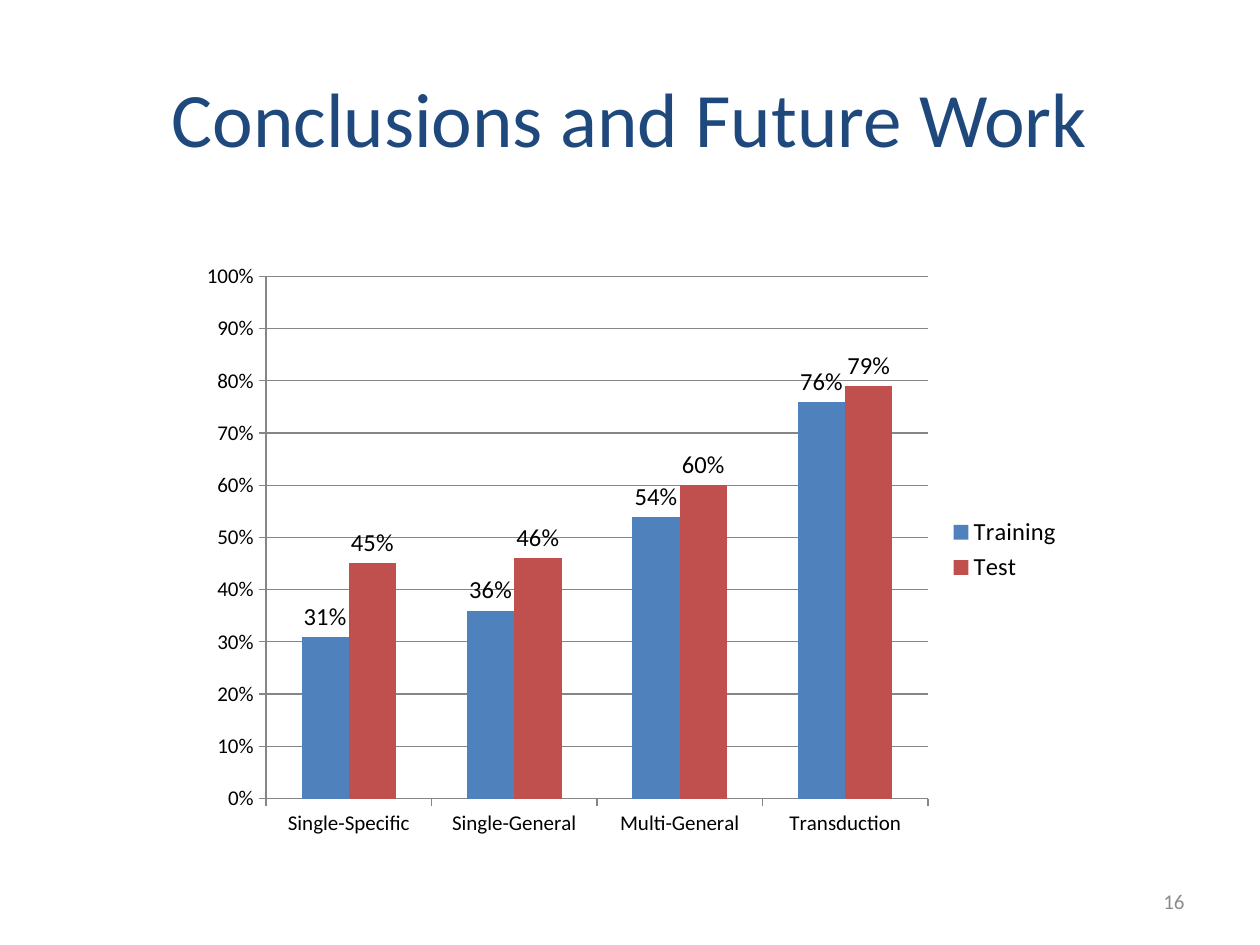
from pptx import Presentation
from pptx.chart.data import CategoryChartData
from pptx.dml.color import RGBColor
from pptx.enum.chart import (
    XL_CHART_TYPE as ChartType,
    XL_LABEL_POSITION as LabelPosition,
    XL_LEGEND_POSITION as LegendPosition,
    XL_TICK_MARK as TickMark,
)
from pptx.enum.text import MSO_ANCHOR as Anchor, PP_ALIGN as Align
from pptx.util import Pt

NAVY = RGBColor(0x1F, 0x49, 0x7D)
BLUE = RGBColor(0x4F, 0x81, 0xBD)
RED = RGBColor(0xC0, 0x50, 0x4D)
GRAY = RGBColor(0x8C, 0x8C, 0x8C)
AXIS_GRAY = RGBColor(0x86, 0x86, 0x86)
BLACK = RGBColor(0, 0, 0)
TITLE_ONLY = 5


class SlideBuilder:
    """Holds the style and the current slide."""

    font_name = "Calibri"

    def __init__(self, deck):
        self.slide = deck.slides.add_slide(deck.slide_layouts[TITLE_ONLY])

    def style_font(self, font, size, color=BLACK):
        font.name = self.font_name
        font.size = Pt(size)
        font.color.rgb = color

    def set_text(self, shape, text, size, color, align):
        frame = shape.text_frame
        frame.text = text
        frame.word_wrap = True
        frame.vertical_anchor = Anchor.MIDDLE
        paragraph = frame.paragraphs[0]
        paragraph.alignment = align
        self.style_font(paragraph.font, size, color)

    def title(self, text, left, top, width, height):
        heading = self.slide.shapes.title
        heading.left, heading.top = Pt(left), Pt(top)
        heading.width, heading.height = Pt(width), Pt(height)
        self.set_text(heading, text, 44, NAVY, Align.CENTER)

    def page_number(self, text, left, top, width, height):
        box = self.slide.shapes.add_textbox(Pt(left), Pt(top), Pt(width), Pt(height))
        self.set_text(box, text, 12, GRAY, Align.RIGHT)

    def column_chart(self, categories, results, left, top, width, height):
        scores = CategoryChartData(number_format="0%")
        scores.categories = categories
        for name, values, _ in results:
            scores.add_series(name, values)
        chart = self.slide.shapes.add_chart(
            ChartType.COLUMN_CLUSTERED, Pt(left), Pt(top), Pt(width), Pt(height), scores
        ).chart
        self.style_font(chart.font, 10)
        chart.has_title = False

        chart.has_legend = True
        chart.legend.position = LegendPosition.RIGHT
        chart.legend.include_in_layout = False
        self.style_font(chart.legend.font, 14)

        for axis in (chart.category_axis, chart.value_axis):
            axis.major_tick_mark = TickMark.OUTSIDE
            axis.minor_tick_mark = TickMark.NONE
            axis.format.line.color.rgb = AXIS_GRAY
            self.style_font(axis.tick_labels.font, 12)

        percent = chart.value_axis
        percent.minimum_scale, percent.maximum_scale = 0, 1
        percent.major_unit = 0.1
        percent.tick_labels.number_format = "0%"
        percent.tick_labels.number_format_is_linked = False
        percent.major_gridlines.format.line.color.rgb = AXIS_GRAY

        plot = chart.plots[0]
        plot.gap_width = 150
        plot.overlap = 0
        plot.vary_by_categories = False
        for series, (_, _, color) in zip(plot.series, results):
            series.format.fill.solid()
            series.format.fill.fore_color.rgb = color
            labels = series.data_labels
            labels.show_value = True
            labels.number_format = "0%"
            labels.number_format_is_linked = False
            labels.position = LabelPosition.OUTSIDE_END
            self.style_font(labels.font, 14)


def main():
    deck = Presentation()
    deck.slide_width, deck.slide_height = Pt(720), Pt(540)
    conclusions = SlideBuilder(deck)
    conclusions.title("Conclusions and Future Work", 36, 21.6, 648, 90)
    conclusions.page_number("16", 516, 500.5, 168, 28.75)
    conclusions.column_chart(
        ["Single-Specific", "Single-General", "Multi-General", "Transduction"],
        [
            ("Training", [0.31, 0.36, 0.54, 0.76], BLUE),
            ("Test", [0.45, 0.46, 0.6, 0.79], RED),
        ],
        108, 144, 506, 340.5,
    )
    deck.save("out.pptx")


if __name__ == "__main__":
    main()
